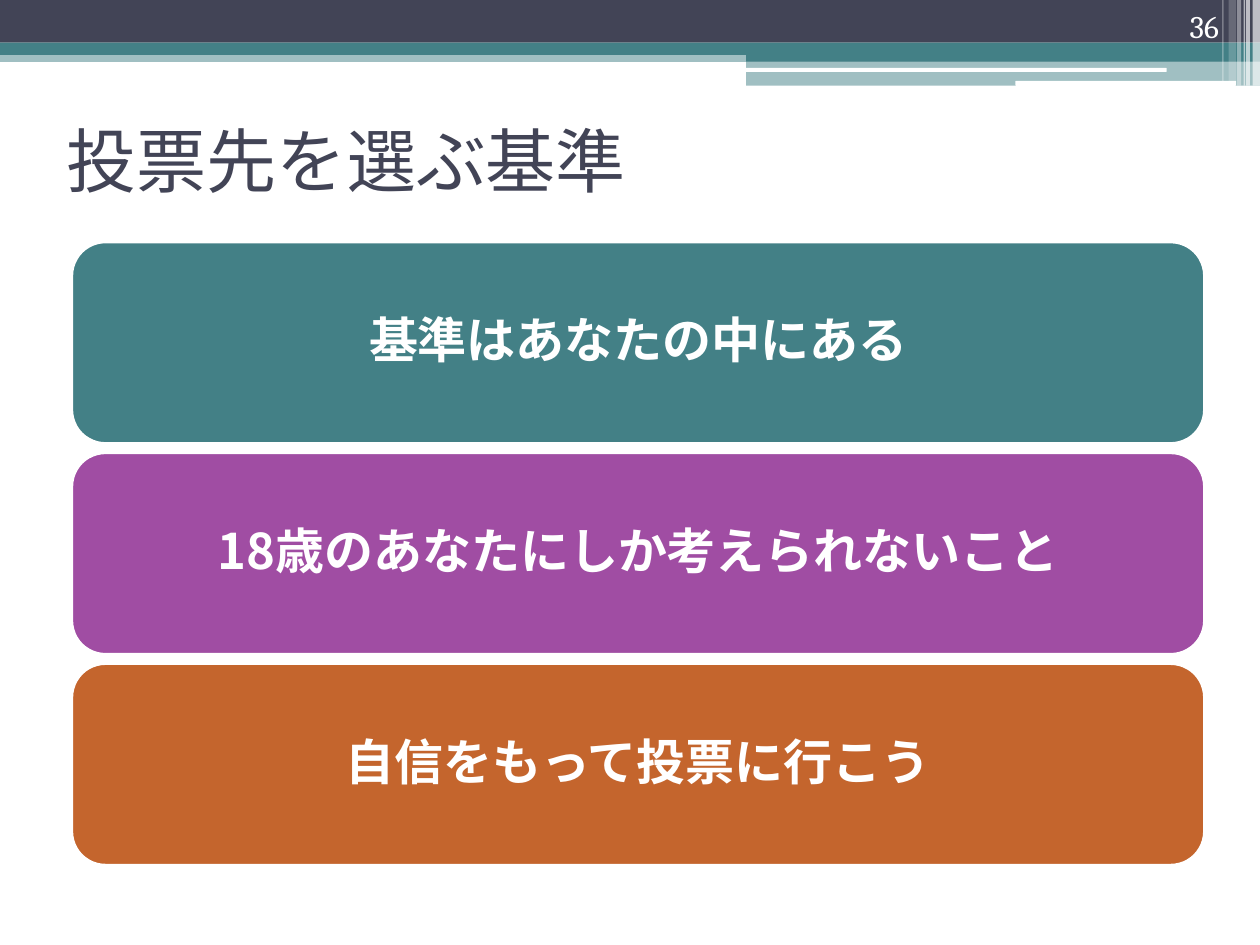
import dataclasses

import pptx
import pptx.dml.color
import pptx.enum.shapes
import pptx.enum.text
import pptx.oxml.ns
import pptx.oxml.xmlchemy
import pptx.util
from lxml import etree
from pptx.util import Cm

COLORS = {
    "navy": "424456",
    "teal": "438086",
    "purple": "A04DA3",
    "orange": "C4652D",
    "white": "FFFFFF",
}
SHAPES = pptx.enum.shapes.MSO_SHAPE
ANCHORS = pptx.enum.text.MSO_ANCHOR
ALIGNS = pptx.enum.text.PP_ALIGN
SANS = "Noto Sans CJK JP"
CARD_TOP, CARD_PITCH = 4.88, 4.25


@dataclasses.dataclass(frozen=True)
class Band:
    left: float
    top: float
    width: float
    height: float
    color: str
    opacity: int = 100
    rounded: bool = False


@dataclasses.dataclass(frozen=True)
class Style:
    size: int
    color: str
    font: str = SANS
    bold: bool = False
    align: ALIGNS = ALIGNS.LEFT
    anchor: ANCHORS = ANCHORS.MIDDLE


@dataclasses.dataclass(frozen=True)
class Card:
    text: str
    color: str


HEADER_BANDS = [
    Band(0, 1.02, 25.4, 0.23, "teal", 50),
    Band(0, 0, 25.4, 0.86, "navy"),
    Band(0, 0.86, 25.4, 0.25, "teal"),
    Band(15.04, 0.99, 10.36, 0.25, "teal"),
    Band(15.04, 1.22, 10.36, 0.51, "teal", 50),
    Band(15.01, 1.37, 8.51, 0.08, "white", rounded=True),
    Band(20.47, 1.63, 4.45, 0.1, "white", rounded=True),
    Band(25.25, 0, 0.15, 1.73, "white", 65),
    Band(25.12, 0, 0.08, 1.73, "white", 65),
    Band(25.07, 0, 0.03, 1.73, "white", 60),
    Band(24.94, 0, 0.08, 1.73, "white", 40),
    Band(24.77, 0, 0.15, 1.63, "white", 20),
    Band(24.64, 0, 0.03, 1.63, "white", 30),
]
CARDS = [
    Card("基準はあなたの中にある", "teal"),
    Card("18歳のあなたにしか考えられないこと", "purple"),
    Card("自信をもって投票に行こう", "orange"),
]
TITLE_STYLE = Style(40, "navy")
NUMBER_STYLE = Style(18, "white", "Cambria", align=ALIGNS.RIGHT, anchor=ANCHORS.BOTTOM)
CARD_STYLE = Style(28, "white", bold=True, align=ALIGNS.CENTER)


def rgb(name: str) -> pptx.dml.color.RGBColor:
    return pptx.dml.color.RGBColor.from_string(COLORS[name])


def draw_band(page, band: Band):
    kind = SHAPES.ROUNDED_RECTANGLE if band.rounded else SHAPES.RECTANGLE
    shape = page.shapes.add_shape(
        kind, Cm(band.left), Cm(band.top), Cm(band.width), Cm(band.height)
    )
    shape.shadow.inherit = False
    shape.fill.solid()
    shape.fill.fore_color.rgb = rgb(band.color)
    shape.line.fill.background()
    if band.opacity < 100:
        color = shape.fill._xPr.find(".//" + pptx.oxml.ns.qn("a:srgbClr"))
        alpha = etree.SubElement(color, pptx.oxml.ns.qn("a:alpha"))
        alpha.set("val", str(band.opacity * 1000))
    return shape


def write_text(shape, text: str, style: Style):
    frame = shape.text_frame
    frame.text = text
    frame.word_wrap = True
    frame.vertical_anchor = style.anchor
    para = frame.paragraphs[0]
    para.alignment = style.align
    span = para.runs[0]
    span.font.size = pptx.util.Pt(style.size)
    span.font.bold = style.bold
    span.font.name = style.font
    span.font.color.rgb = rgb(style.color)
    east_asian = etree.SubElement(span.font._element, pptx.oxml.ns.qn("a:ea"))
    east_asian.set("typeface", style.font)
    return frame


def draw_text(page, text: str, left: float, top: float, width: float, height: float, style: Style) -> None:
    box = page.shapes.add_textbox(Cm(left), Cm(top), Cm(width), Cm(height))
    write_text(box, text, style)


def draw_card(page, card: Card, top: float) -> None:
    shape = draw_band(page, Band(1.45, top, 22.83, 4.06, card.color, rounded=True))
    shape.line.color.rgb = rgb("white")
    shape.line.width = pptx.util.Pt(1.5)
    frame = write_text(shape, card.text, CARD_STYLE)
    frame.margin_left = frame.margin_right = Cm(0.3)
    frame.margin_top = frame.margin_bottom = Cm(0.15)
    para = frame.paragraphs[0]
    para.line_spacing = 0.9
    para.space_after = pptx.util.Pt(9.8)


def main() -> None:
    deck = pptx.Presentation()
    deck.slide_width, deck.slide_height = Cm(25.4), Cm(19.05)
    page = deck.slides.add_slide(deck.slide_layouts[6])
    for band in HEADER_BANDS:
        draw_band(page, band)
    draw_text(page, "投票先を選ぶ基準", 1.09, 1.73, 22.86, 2.97, TITLE_STYLE)
    draw_text(page, "36", 22.71, 0, 2.11, 1.02, NUMBER_STYLE)
    for index, card in enumerate(CARDS):
        draw_card(page, card, CARD_TOP + index * CARD_PITCH)
    deck.save("out.pptx")


if __name__ == "__main__":
    main()
